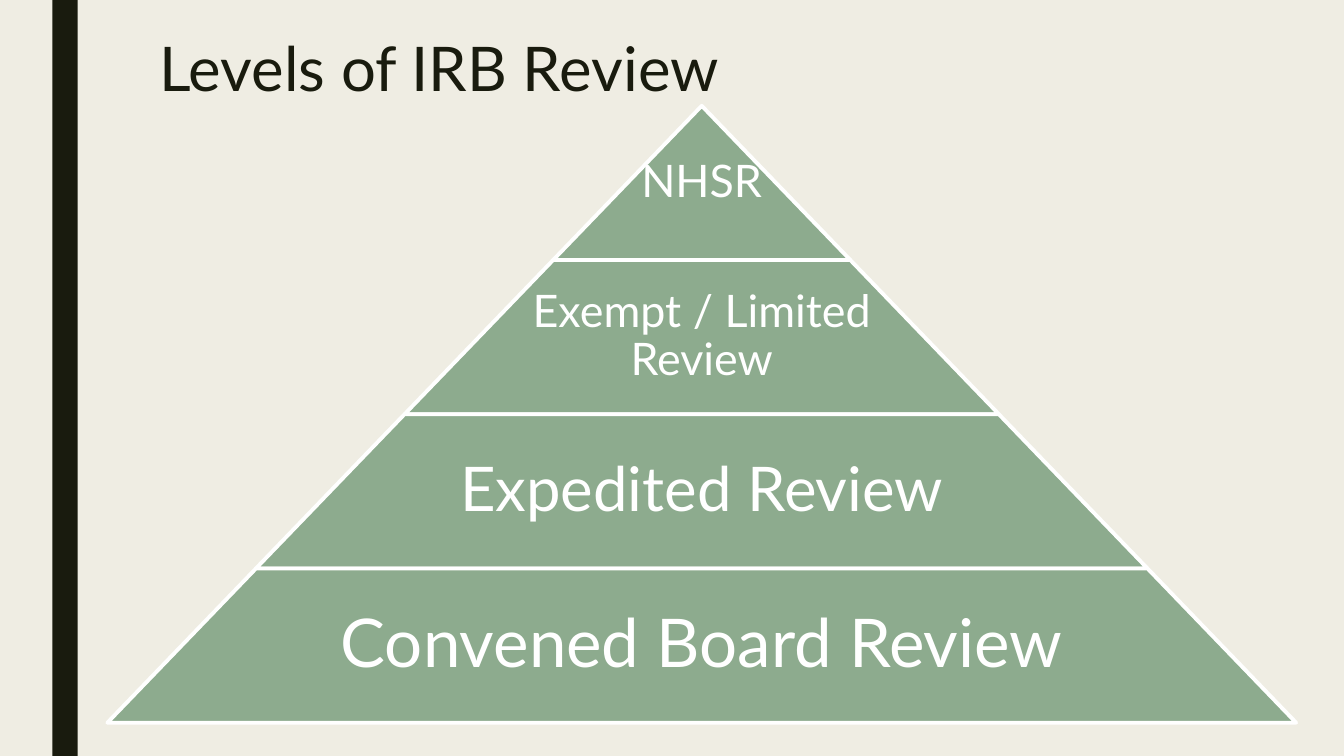
from pptx import Presentation
from pptx.dml.color import RGBColor
from pptx.enum.shapes import MSO_SHAPE as Preset
from pptx.enum.text import MSO_ANCHOR as Anchor, PP_ALIGN as Align
from pptx.util import Inches, Pt

TITLE = "Levels of IRB Review"
LEVELS = [
    ("NHSR", 32, 1, 0.04),
    ("Exempt / Limited Review", 32, 0.65, 0.04),
    ("Expedited Review", 44, 0.65, 0.06),
    ("Convened Board Review", 48, 0.65, 0.07),
]
FONT = "Lato"
DARK, CREAM, GREEN, WHITE = "191B0E", "EFEDE3", "8DAB8E", "FFFFFF"
CENTER, PEAK, LEVEL_HEIGHT, BASE = 6.96, 1.05, 1.53, 11.79


def paint(fill, color):
    fill.solid()
    fill.fore_color.rgb = RGBColor.from_string(color)


def add_preset(slide, preset, left, top, width, height, color):
    shape = slide.shapes.add_shape(
        preset, Inches(left), Inches(top), Inches(width), Inches(height))
    shape.shadow.inherit = False
    paint(shape.fill, color)
    shape.line.fill.background()
    return shape


def write(frame, text, size, color, align=Align.LEFT, anchor=Anchor.TOP,
          spacing=0.9, inset_x=0.1, inset_y=0.05):
    frame.word_wrap = True
    frame.vertical_anchor = anchor
    frame.margin_left = frame.margin_right = Inches(inset_x)
    frame.margin_top = frame.margin_bottom = Inches(inset_y)
    paragraph = frame.paragraphs[0]
    paragraph.alignment = align
    paragraph.line_spacing = spacing
    run = paragraph.add_run()
    run.text = text
    run.font.name = FONT
    run.font.size = Pt(size)
    run.font.color.rgb = RGBColor.from_string(color)


def main():
    deck = Presentation()
    deck.slide_width, deck.slide_height = Inches(13.33), Inches(7.5)
    slide = deck.slides.add_slide(deck.slide_layouts[5])
    paint(slide.background.fill, CREAM)
    add_preset(slide, Preset.RECTANGLE, 0.52, 0, 0.25, 7.5, DARK)

    title = slide.shapes.title
    title.left, title.top = Inches(1.48), Inches(0.34)
    title.width, title.height = Inches(11.21), Inches(0.85)
    write(title.text_frame, TITLE, 44, DARK, spacing=0.89)

    step = BASE / len(LEVELS)
    for index, (label, size, share, inset) in enumerate(LEVELS):
        width = step * (index + 1)
        top = PEAK + LEVEL_HEIGHT * index
        level = add_preset(slide, Preset.TRAPEZOID, CENTER - width / 2, top,
                           width, LEVEL_HEIGHT, GREEN)
        level.adjustments[0] = step / 2 / LEVEL_HEIGHT
        paint(level.line.fill, WHITE)
        level.line.width = Pt(2.75)

        label_width = width * share
        label_box = slide.shapes.add_textbox(
            Inches(CENTER - label_width / 2), Inches(top),
            Inches(label_width), Inches(LEVEL_HEIGHT))
        write(label_box.text_frame, label, size, WHITE, align=Align.CENTER,
              anchor=Anchor.MIDDLE, inset_x=inset, inset_y=inset)

    deck.save("out.pptx")


if __name__ == "__main__":
    main()
